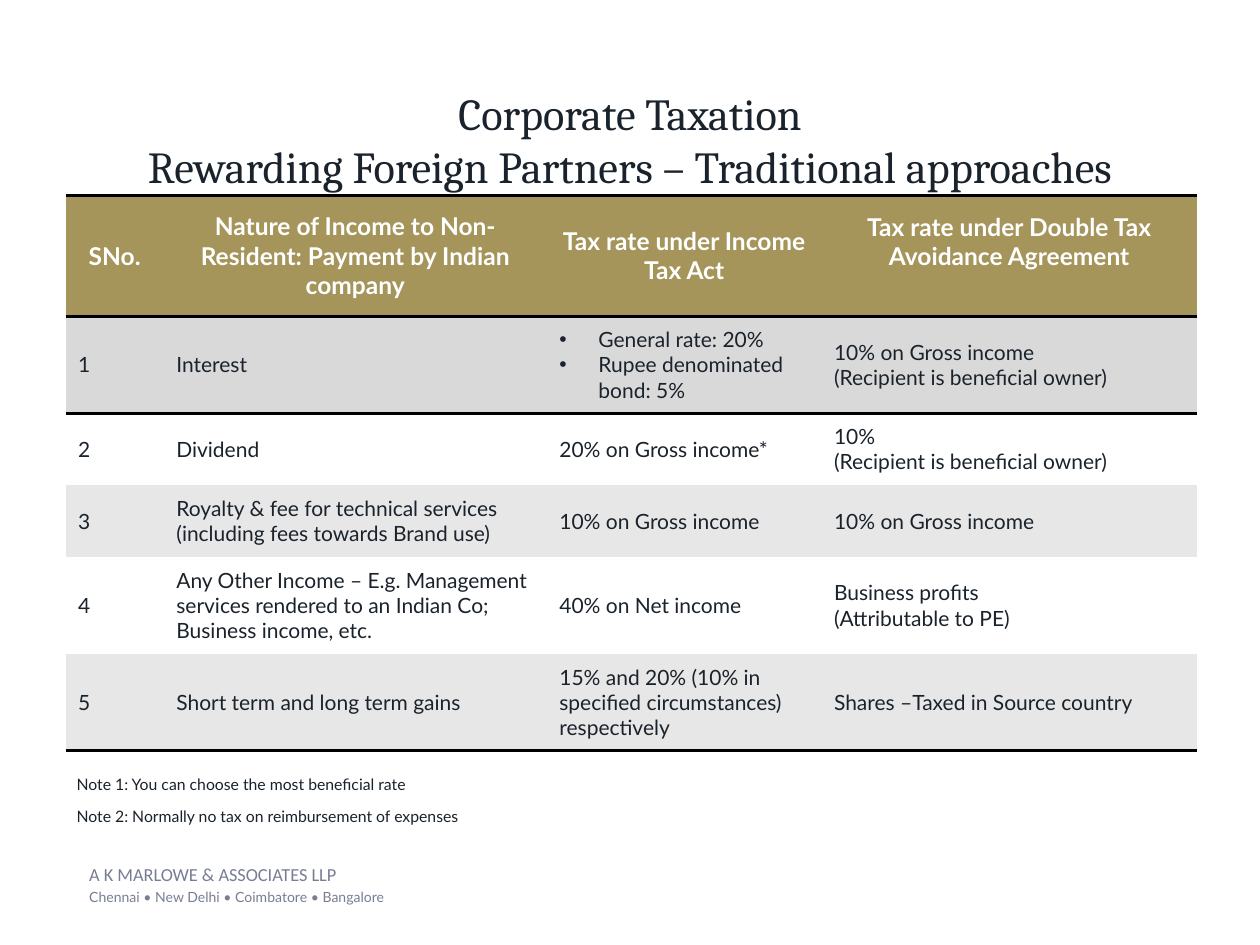
import pptx
import pptx.util
import pptx.dml.color
import pptx.enum.text
import pptx.oxml
import pptx.oxml.ns
from pptx.util import Inches

COLORS = {
    "ink": "1A222B",
    "muted": "787D94",
    "gold": "A5955B",
    "white": "FFFFFF",
    "first": "D9D9D9",
    "band": "E7E7E7",
    "rule": "000000",
}
ALIGN = pptx.enum.text.PP_ALIGN
ANCHOR = pptx.enum.text.MSO_ANCHOR
NO_STYLE = "{2D5ABB26-0587-4C30-8999-92F81FD0307C}"

HEADERS = [
    "SNo.",
    "Nature of Income to Non-Resident: Payment by Indian company",
    "Tax rate under Income Tax Act",
    "Tax rate under Double Tax Avoidance Agreement",
]
# Each cell is a list of paragraphs
INCOME_ROWS = [
    [["Interest"],
     ["General rate: 20%", "Rupee denominated bond: 5%"],
     ["10% on Gross income", "(Recipient is beneficial owner)"]],
    [["Dividend"],
     ["20% on Gross income*"],
     ["10%", "(Recipient is beneficial owner)"]],
    [["Royalty & fee for technical services (including fees towards Brand use)"],
     ["10% on Gross income"],
     ["10% on Gross income"]],
    [["Any Other Income – E.g. Management services rendered to an Indian Co; "
      "Business income, etc."],
     ["40% on Net income"],
     ["Business profits", "(Attributable to PE)"]],
    [["Short term and long term gains"],
     ["15% and 20% (10% in specified circumstances) respectively"],
     ["Shares –Taxed in Source country"]],
]
COLUMN_WIDTHS = [0.78, 3.04, 2.18, 2.98]
ROW_HEIGHTS = [0.96, 0.77, 0.57, 0.57, 0.77, 0.77]


def rgb(name):
    return pptx.dml.color.RGBColor.from_string(COLORS[name])


def add_bullet(paragraph, indent=0.31):
    properties = paragraph._p.get_or_add_pPr()
    properties.set("marL", str(Inches(indent)))
    properties.set("indent", str(-Inches(indent)))
    for tag, attribute, value in (("buFont", "typeface", "Arial"),
                                  ("buChar", "char", "•")):
        element = pptx.oxml.parse_xml(
            f'<a:{tag} {pptx.oxml.ns.nsdecls("a")} {attribute}="{value}"/>')
        properties.append(element)


def write(paragraph, text, size=12, font="Lato", color="ink", bold=False,
          align=ALIGN.LEFT, before=0, bullet=False):
    paragraph.text = text
    paragraph.alignment = align
    paragraph.space_before = pptx.util.Pt(before)
    if bullet:
        add_bullet(paragraph)
    paragraph.font.size = pptx.util.Pt(size)
    paragraph.font.name = font
    paragraph.font.bold = bold
    paragraph.font.color.rgb = rgb(color)


class SlideBuilder:
    """Holds the current slide and adds its elements."""

    def __init__(self, presentation):
        self.slide = presentation.slides.add_slide(presentation.slide_layouts[5])

    def write_lines(self, frame, lines, **style):
        for index, line in enumerate(lines):
            paragraph = frame.paragraphs[0] if index == 0 else frame.add_paragraph()
            write(paragraph, line, **style)

    def title(self, lines, left, top, width, height):
        shape = self.slide.shapes.title
        shape.left, shape.top = Inches(left), Inches(top)
        shape.width, shape.height = Inches(width), Inches(height)
        frame = shape.text_frame
        frame.margin_left = frame.margin_right = Inches(0.04)
        frame.margin_top = frame.margin_bottom = Inches(0.04)
        frame.vertical_anchor = ANCHOR.BOTTOM
        frame.auto_size = pptx.enum.text.MSO_AUTO_SIZE.NONE
        self.write_lines(frame, lines, size=25.3, font="Cambria",
                         align=ALIGN.CENTER)

    def text_box(self, left, top, width, height):
        shape = self.slide.shapes.add_textbox(
            Inches(left), Inches(top), Inches(width), Inches(height))
        shape.text_frame.word_wrap = True
        return shape.text_frame

    def rule(self, cell, edges, points=2):
        properties = cell._tc.get_or_add_tcPr()
        for index, edge in enumerate(edges):
            line = pptx.oxml.parse_xml(
                f'<a:ln{edge} {pptx.oxml.ns.nsdecls("a")} w="{pptx.util.Pt(points)}">'
                f'<a:solidFill><a:srgbClr val="{COLORS["rule"]}"/></a:solidFill>'
                f'</a:ln{edge}>')
            properties.insert(index, line)

    def cell(self, cell, lines, fill, edges="", **style):
        cell.fill.solid()
        cell.fill.fore_color.rgb = rgb(fill)
        cell.vertical_anchor = ANCHOR.MIDDLE
        self.write_lines(cell.text_frame, lines, **style)
        self.rule(cell, edges)

    def table(self, left, top, widths, heights):
        table = self.slide.shapes.add_table(
            len(heights), len(widths), Inches(left), Inches(top),
            Inches(sum(widths)), Inches(sum(heights))).table
        table._tbl.tblPr.find(pptx.oxml.ns.qn("a:tableStyleId")).text = NO_STYLE
        for column, width in zip(table.columns, widths):
            column.width = Inches(width)
        for row, height in zip(table.rows, heights):
            row.height = Inches(height)
        return table


def main():
    presentation = pptx.Presentation()
    presentation.slide_width, presentation.slide_height = Inches(10), Inches(7.5)
    builder = SlideBuilder(presentation)

    # Firm name and offices
    footer = builder.text_box(0.61, 6.8, 4.77, 0.44)
    write(footer.paragraphs[0], "A K MARLOWE & ASSOCIATES LLP", size=10.5,
          font="Calibri", color="muted")
    write(footer.add_paragraph(), "Chennai • New Delhi • Coimbatore • Bangalore",
          size=8, color="muted", before=2.1)

    # Title
    builder.title(["Corporate Taxation",
                   "Rewarding Foreign Partners – Traditional approaches"],
                  0.48, 0.64, 9.04, 0.93)

    # Tax rate table
    table = builder.table(0.52, 1.55, COLUMN_WIDTHS, ROW_HEIGHTS)
    for column, header in enumerate(HEADERS):
        builder.cell(table.cell(0, column), [header], "gold", edges="TB",
                     size=14, color="white", bold=True, align=ALIGN.CENTER)
    table.cell(0, 3).margin_bottom = Inches(0.28)

    last = len(INCOME_ROWS)
    for number, row in enumerate(INCOME_ROWS, start=1):
        fill = "first" if number == 1 else "band" if number % 2 else "white"
        edges = {1: "T", last: "B"}.get(number, "")
        for column, lines in enumerate([[str(number)]] + row):
            builder.cell(table.cell(number, column), lines, fill, edges,
                         bullet=(number, column) == (1, 2))

    # Notes
    notes = ["Note 1: You can choose the most beneficial rate",
             "Note 2: Normally no tax on reimbursement of expenses"]
    for index, note in enumerate(notes):
        frame = builder.text_box(0.51, 6.1 + 0.25 * index, 7.8, 0.25)
        write(frame.paragraphs[0], note, size=9)

    presentation.save("out.pptx")


if __name__ == "__main__":
    main()
